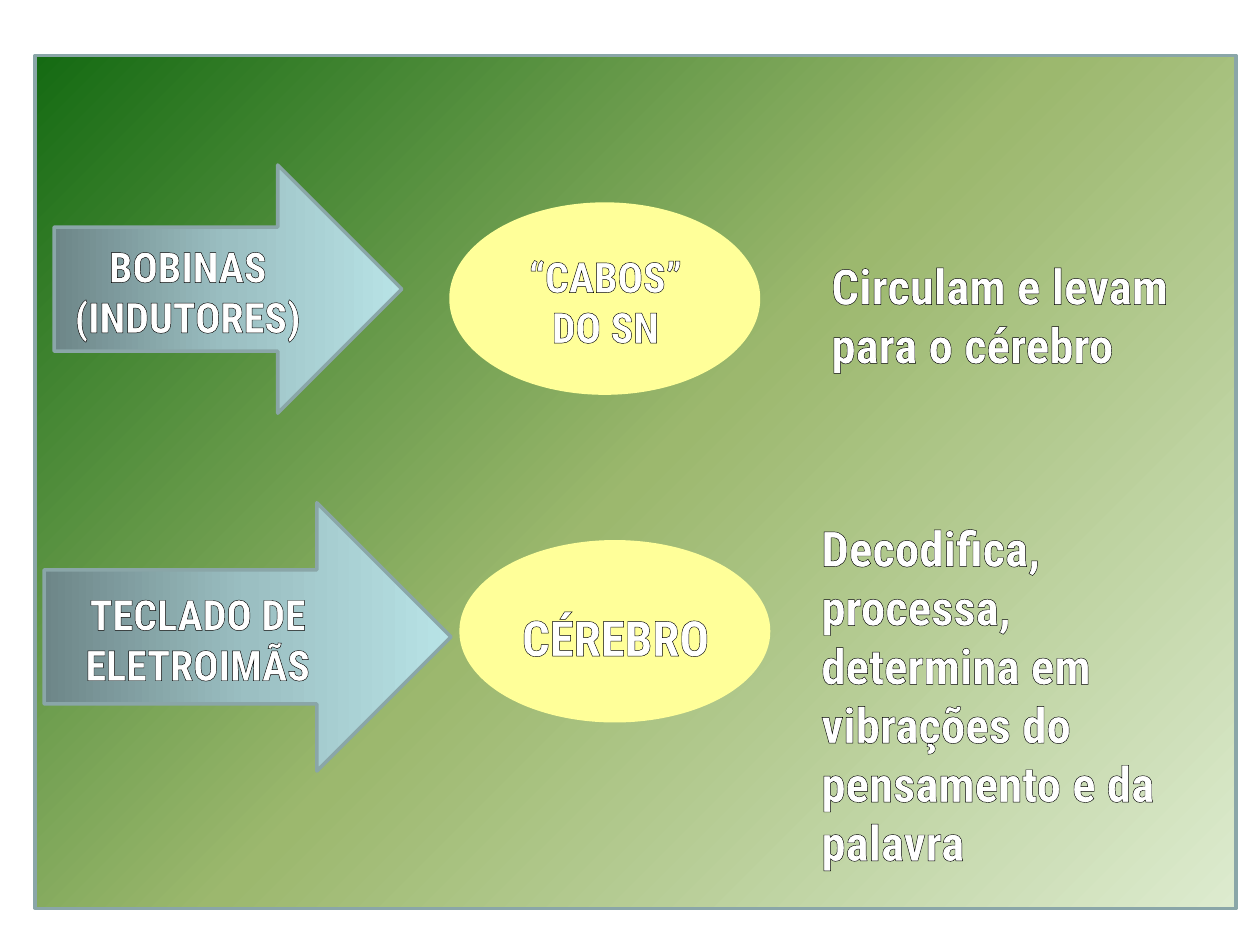
from lxml import etree
from pptx import Presentation
from pptx import util as u
from pptx.dml import color
from pptx.enum import shapes, text
from pptx.oxml import ns

COLORS = {
    "border": "8AA6A8",
    "oval": "FFFF99",
    "text": "FFFFFF",
    "outline": "000000",
}
GREENS = [(0, "DDEBCF"), (50, "9CB86E"), (100, "156B13")]
BLUES = [(0, "6D8688"), (50, "9BBFC2"), (100, "B8E3E6")]


class SlideBuilder:
    font = "Roboto Condensed"
    line_width = u.Pt(2)
    outline_width = u.Pt(0.75)

    def __init__(self, slide):
        self.slide = slide

    def add_shape(self, kind, box, line):
        shape = self.slide.shapes.add_shape(kind, *map(u.Inches, box))
        shape.shadow.inherit = False
        shape.line.color.rgb = color.RGBColor.from_string(line)
        shape.line.width = self.line_width
        return shape

    def add_gradient(self, kind, box, stops, angle):
        shape = self.add_shape(kind, box, COLORS["border"])
        shape.fill.gradient()
        shape.fill.gradient_angle = angle
        stop_list = shape.element.spPr.find(".//" + ns.qn("a:gsLst"))
        for stop in list(stop_list):
            stop_list.remove(stop)
        for position, value in stops:
            stop = etree.SubElement(stop_list, ns.qn("a:gs"), pos=str(position * 1000))
            etree.SubElement(stop, ns.qn("a:srgbClr"), val=value)

    def add_panel(self, box):
        self.add_gradient(shapes.MSO_SHAPE.RECTANGLE, box, GREENS, 135)

    def add_arrow(self, box):
        self.add_gradient(shapes.MSO_SHAPE.RIGHT_ARROW, box, BLUES, 0)

    def add_oval(self, box):
        shape = self.add_shape(shapes.MSO_SHAPE.OVAL, box, COLORS["oval"])
        shape.fill.solid()
        shape.fill.fore_color.rgb = color.RGBColor.from_string(COLORS["oval"])

    def add_text(self, box, words, size, align=text.PP_ALIGN.CENTER):
        frame = self.slide.shapes.add_textbox(*map(u.Inches, box)).text_frame
        frame.word_wrap = True
        frame.auto_size = text.MSO_AUTO_SIZE.SHAPE_TO_FIT_TEXT
        paragraph = frame.paragraphs[0]
        paragraph.alignment = align
        run = paragraph.add_run()
        run.text = words
        run.font.name = self.font
        run.font.size = u.Pt(size)
        run.font.bold = True
        run.font.color.rgb = color.RGBColor.from_string(COLORS["text"])
        self.outline(run)

    def outline(self, run):
        line = etree.Element(ns.qn("a:ln"), w=str(int(self.outline_width)))
        fill = etree.SubElement(line, ns.qn("a:solidFill"))
        etree.SubElement(fill, ns.qn("a:srgbClr"), val=COLORS["outline"])
        run.font._element.insert(0, line)


def main():
    presentation = Presentation()
    presentation.slide_width = u.Inches(10)
    presentation.slide_height = u.Inches(7.5)
    builder = SlideBuilder(presentation.slides.add_slide(presentation.slide_layouts[6]))
    left = text.PP_ALIGN.LEFT

    builder.add_panel((0.28, 0.44, 9.53, 6.77))

    builder.add_arrow((0.43, 1.31, 2.76, 1.97))
    builder.add_text((0.27, 1.86, 2.44, 0.91), "BOBINAS (INDUTORES)", 24)
    builder.add_oval((3.58, 1.62, 2.44, 1.5))
    builder.add_text((3.9, 1.94, 1.81, 0.91), "“CABOS” DO SN", 24)
    builder.add_text((6.5, 1.98, 3.23, 1.04), "Circulam e levam para o cérebro", 28, left)

    builder.add_arrow((0.35, 3.99, 3.23, 2.13))
    builder.add_text((0.27, 4.62, 2.6, 0.91), "TECLADO DE ELETROIMÃS", 24)
    builder.add_oval((3.66, 4.3, 2.44, 1.42))
    builder.add_text((3.9, 4.77, 1.97, 0.57), "CÉREBRO", 28)
    builder.add_text(
        (6.42, 4.06, 3.31, 2.93),
        "Decodifica, processa, determina em vibrações do pensamento e da palavra",
        28,
        left,
    )

    presentation.save("out.pptx")


if __name__ == "__main__":
    main()
